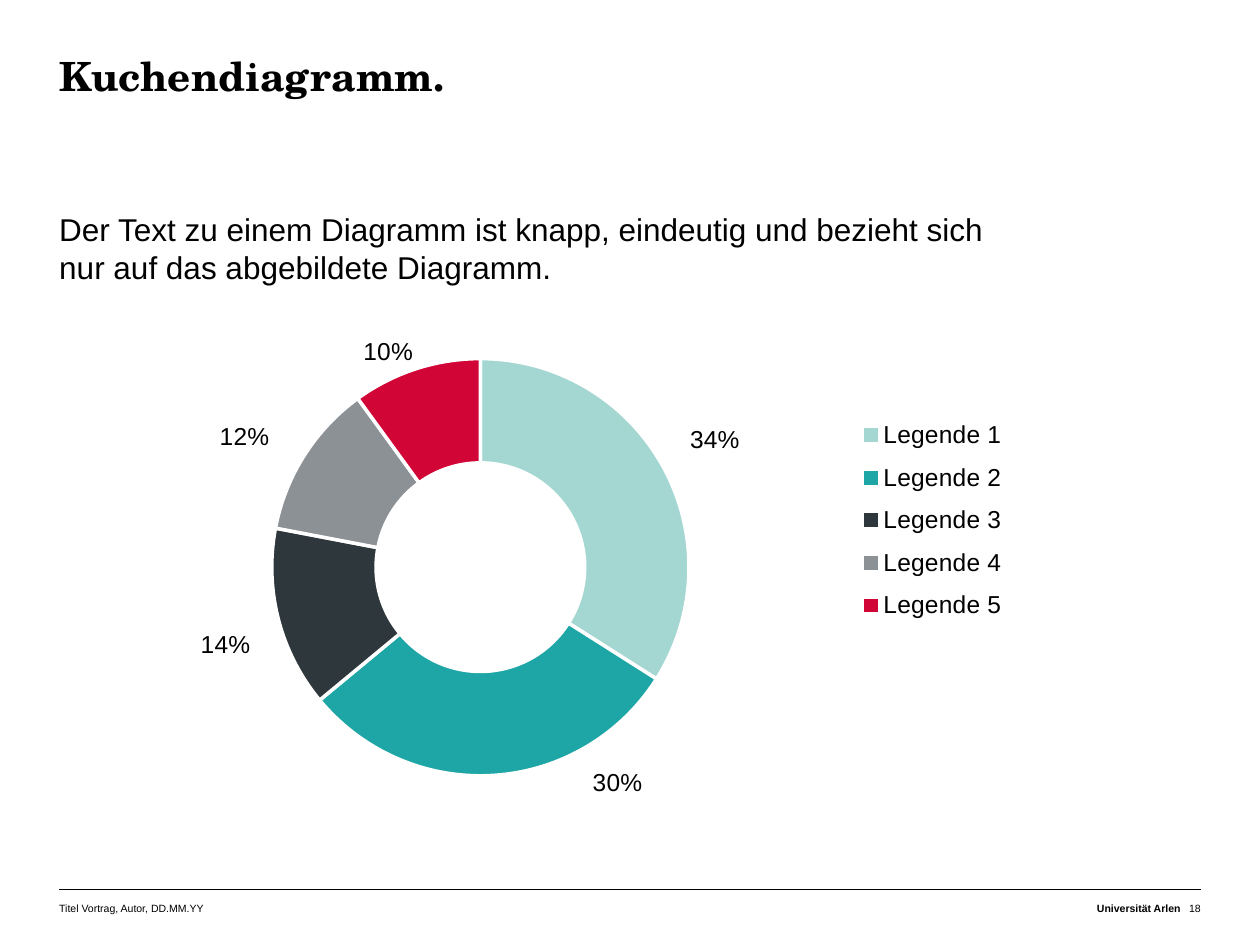
import math

import pptx
import pptx.chart.data
import pptx.dml.color
import pptx.enum.chart
import pptx.enum.shapes
import pptx.enum.text
import pptx.oxml
import pptx.oxml.ns
import pptx.util
from lxml import etree
from pptx.util import Inches

COLORS = {
    "black": "000000",
    "white": "FFFFFF",
    "mint": "A5D7D2",
    "teal": "1EA5A5",
    "slate": "2D373C",
    "gray": "8C9196",
    "red": "D20537",
}
LEFT, WIDTH = 0.47, 9.06
CHART_TOP, CHART_HEIGHT = 2.41, 4.41
RING_CENTER, RING_MIDDLE_RADIUS = (3.81, 4.5), 1.24
SEGMENTS = [
    ("Legende 1", 0.34, "mint", (5.67, 3.49)),
    ("Legende 2", 0.30, "teal", (4.9, 6.21)),
    ("Legende 3", 0.14, "slate", (1.79, 5.12)),
    ("Legende 4", 0.12, "gray", (1.94, 3.47)),
    ("Legende 5", 0.10, "red", (3.08, 2.79)),
]


def rgb(name):
    return pptx.dml.color.RGBColor.from_string(COLORS[name])


def place(shape, left, top, width, height):
    shape.left, shape.top = Inches(left), Inches(top)
    shape.width, shape.height = Inches(width), Inches(height)


def write_text(shape, text, size, font="Arial", bold=False, align="LEFT", spacing=None, inset_top=0):
    frame = shape.text_frame
    frame.word_wrap = True
    frame.auto_size = pptx.enum.text.MSO_AUTO_SIZE.NONE
    frame.vertical_anchor = pptx.enum.text.MSO_ANCHOR.TOP
    frame.margin_left = frame.margin_right = frame.margin_bottom = 0
    frame.margin_top = Inches(inset_top)
    para = frame.paragraphs[0]
    para.text = text
    para.alignment = getattr(pptx.enum.text.PP_ALIGN, align)
    para.space_before = pptx.util.Pt(0)
    if spacing:
        para.line_spacing = pptx.util.Pt(spacing)
    for span in para.runs:
        span.font.name = font
        span.font.size = pptx.util.Pt(size)
        span.font.bold = bold
        span.font.color.rgb = rgb("black")
    return para


def remove_bullet(para):
    properties = para._p.get_or_add_pPr()
    properties.set("marL", "0")
    properties.set("indent", "0")
    etree.SubElement(properties, pptx.oxml.ns.qn("a:buNone"))


def add_footer_text(page, left, width, text, **style):
    box = page.shapes.add_textbox(Inches(left), Inches(7.14), Inches(width), Inches(0.2))
    write_text(box, text, 6, inset_top=0.02, **style)


def add_rule(page, top):
    rule = page.shapes.add_connector(
        pptx.enum.shapes.MSO_CONNECTOR.STRAIGHT,
        Inches(LEFT), Inches(top), Inches(LEFT + WIDTH), Inches(top),
    )
    rule.line.color.rgb = rgb("black")
    rule.line.width = pptx.util.Pt(0.25)
    etree.SubElement(rule._element.spPr, pptx.oxml.ns.qn("a:effectLst"))


def layout_xml(x, y, width=None, height=None, target=None):
    parts = []
    if target:
        parts.append(f'<c:layoutTarget val="{target}"/>')
    if width:
        parts.append('<c:xMode val="edge"/><c:yMode val="edge"/>')
    parts.append(f'<c:x val="{x:.4f}"/><c:y val="{y:.4f}"/>')
    if width:
        parts.append(f'<c:w val="{width}"/><c:h val="{height}"/>')
    namespace = pptx.oxml.ns.nsdecls("c")
    return f'<c:layout {namespace}><c:manualLayout>{"".join(parts)}</c:manualLayout></c:layout>'


def set_layout(parent, position, xml):
    for existing in parent.findall(pptx.oxml.ns.qn("c:layout")):
        parent.remove(existing)
    parent.insert(position, pptx.oxml.parse_xml(xml))


def label_xml(index, offset):
    flags = "".join(
        f'<c:{flag} val="{int(flag == "showVal")}"/>'
        for flag in ("showLegendKey", "showVal", "showCatName", "showSerName", "showPercent", "showBubbleSize")
    )
    return (
        f'<c:dLbl {pptx.oxml.ns.nsdecls("c")}><c:idx val="{index}"/>{layout_xml(*offset)}'
        f'<c:numFmt formatCode="0%" sourceLinked="0"/>{flags}</c:dLbl>'
    )


def label_offsets():
    offsets, start = [], 0
    for _, share, _, target in SEGMENTS:
        angle = 2 * math.pi * (start + share / 2)
        x = RING_CENTER[0] + RING_MIDDLE_RADIUS * math.sin(angle)
        y = RING_CENTER[1] - RING_MIDDLE_RADIUS * math.cos(angle)
        offsets.append(((target[0] - x) / WIDTH, (target[1] - y) / CHART_HEIGHT))
        start += share
    return offsets


def add_doughnut(page):
    data = pptx.chart.data.CategoryChartData(number_format="0%")
    data.categories = [name for name, *_ in SEGMENTS]
    data.add_series("Series 1", [share for _, share, *_ in SEGMENTS])
    chart = page.shapes.add_chart(
        pptx.enum.chart.XL_CHART_TYPE.DOUGHNUT,
        Inches(LEFT), Inches(CHART_TOP), Inches(WIDTH), Inches(CHART_HEIGHT), data,
    ).chart
    chart.has_title = False
    chart.font.name = "Arial"
    chart.font.size = pptx.util.Pt(14)
    chart.font.color.rgb = rgb("black")
    chart.has_legend = True
    chart.legend.position = pptx.enum.chart.XL_LEGEND_POSITION.RIGHT
    chart.legend.include_in_layout = False

    series = chart.plots[0].series[0]
    for index, (_, _, color, _) in enumerate(SEGMENTS):
        style = series.points[index].format
        style.fill.solid()
        style.fill.fore_color.rgb = rgb(color)
        style.line.color.rgb = rgb("white")
        style.line.width = pptx.util.Pt(2)

    labels = series.data_labels
    labels.show_value = True
    labels.show_percentage = False
    labels.number_format = "0%"
    labels.number_format_is_linked = False

    root = chart.element
    label_list = root.xpath(".//c:ser/c:dLbls")[0]
    for index, offset in enumerate(label_offsets()):
        label_list.insert(index, pptx.oxml.parse_xml(label_xml(index, offset)))
    for leader in root.xpath(".//c:showLeaderLines"):
        leader.set("val", "0")
    root.xpath(".//c:holeSize")[0].set("val", "60")
    set_layout(root.xpath(".//c:plotArea")[0], 0, layout_xml(0.136, 0.099, 0.466, 0.751, "inner"))
    set_layout(root.xpath(".//c:legend")[0], 1, layout_xml(0.69, 0.185, 0.15, 0.41))


def main():
    deck = pptx.Presentation()
    deck.slide_width, deck.slide_height = Inches(10), Inches(7.5)
    page = deck.slides.add_slide(deck.slide_layouts[1])
    title, body = page.shapes.title, page.placeholders[1]

    add_rule(page, 7.06)
    place(title, LEFT, 0.44, WIDTH, 0.83)
    write_text(title, "Kuchendiagramm.", 23, font="TeX Gyre Schola", bold=True, spacing=25)
    place(body, LEFT, 1.66, WIDTH, 0.65)
    remove_bullet(write_text(
        body,
        "Der Text zu einem Diagramm ist knapp, eindeutig und bezieht sich \vnur auf das abgebildete Diagramm.",
        18, spacing=22,
    ))
    add_footer_text(page, LEFT, 2.36, "Titel Vortrag, Autor, DD.MM.YY")
    add_footer_text(page, 7.28, 2.09, "Universität Arlen", bold=True, align="RIGHT")
    add_footer_text(page, 9.37, 0.16, "18", align="RIGHT")
    add_doughnut(page)
    deck.save("out.pptx")


if __name__ == "__main__":
    main()
